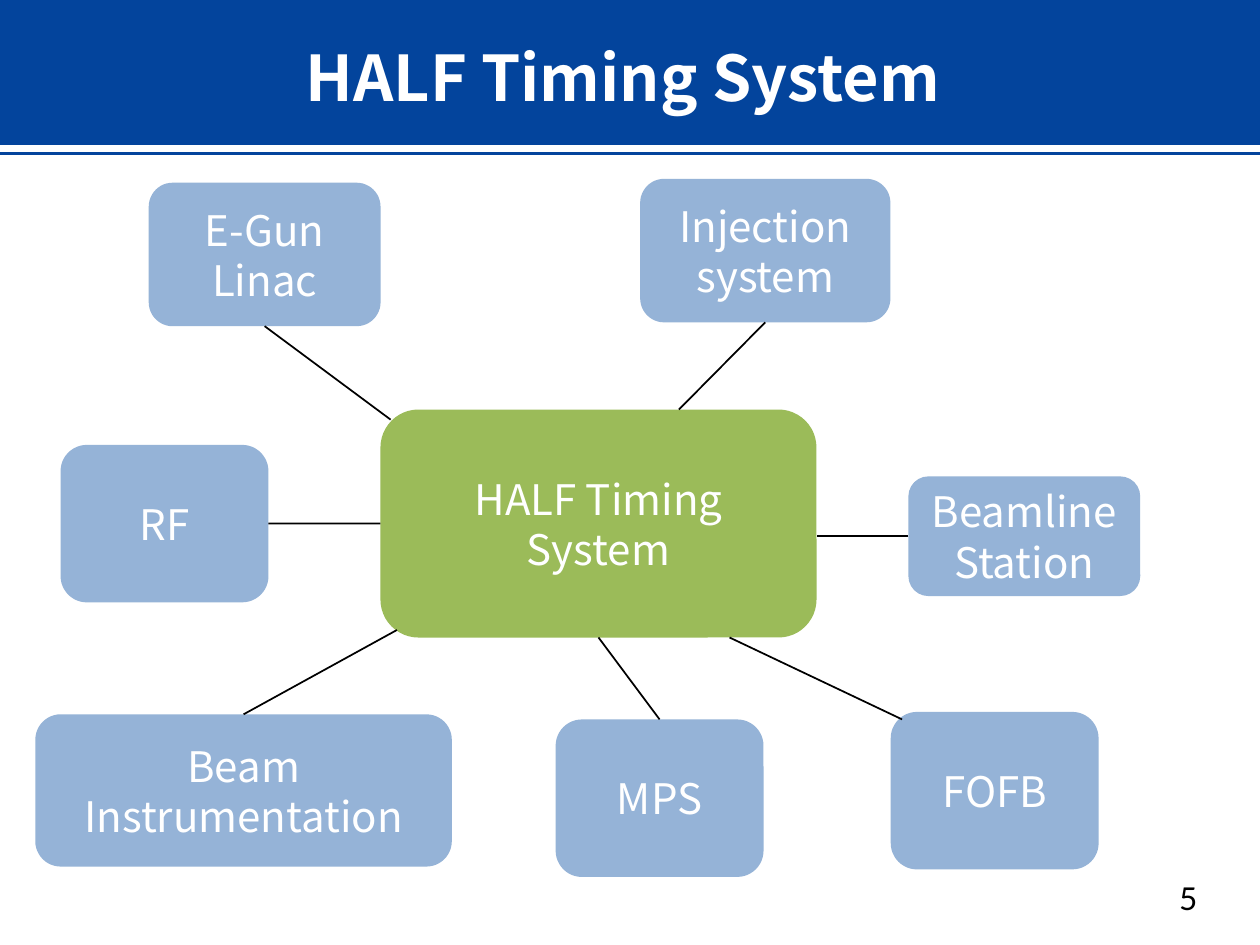
"""Build the HALF timing system slide: a hub and its linked subsystems."""
from lxml import etree
from pptx import Presentation
from pptx import util as u
from pptx.dml.color import RGBColor
from pptx.enum import shapes, text
from pptx.oxml import ns

HUES = {"navy": "03449C", "green": "9BBB59", "blue": "95B3D7",
        "white": "FFFFFF", "black": "000000"}
SANS = "Noto Sans CJK SC"
TOP, LEFT, BASE, RIGHT = range(4)

NODES = {
    "gun": (["E-Gun", "Linac"], (85, 104.4, 132.5, 82)),
    "inject": (["Injection system"], (365.8, 102.2, 143, 82)),
    "beam": (["Beam Instrumentation"], (20.2, 408.2, 238, 87)),
    "rf": (["RF"], (34.6, 254.2, 118.8, 90)),
    "fofb": (["FOFB"], (509, 406.8, 118.8, 90)),
    "mps": (["MPS"], (317.5, 411.1, 118.8, 90)),
    "station": (["Beamline Station"], (519.1, 272.2, 132.5, 68.4)),
}
LINKS = [
    (("gun", BASE), (223.2, 239.8)),
    (("rf", RIGHT), ("hub", LEFT)),
    (("beam", TOP), (226.8, 360)),
    (("inject", BASE), (388, 234)),
    ((416.9, 364.3), (515.5, 411.1)),
    (("hub", BASE), ("mps", TOP)),
    (("station", LEFT), (466.6, 306.4)),
]


def tint(name):
    """Return a colour by its name."""
    return RGBColor.from_string(HUES[name])


def write(frame, lines, size, hue, font=SANS, bold=False, align=text.PP_ALIGN.CENTER):
    """Fill a text frame with one paragraph per line."""
    frame.word_wrap = True
    frame.vertical_anchor = text.MSO_ANCHOR.MIDDLE
    for i, line in enumerate(lines):
        para = frame.add_paragraph() if i else frame.paragraphs[0]
        para.alignment = align
        run = para.add_run()
        run.text = line
        run.font.name, run.font.size, run.font.bold = font, u.Pt(size), bold
        run.font.color.rgb = tint(hue)


def block(slide, kind, area, hue):
    """Add a plain filled shape."""
    shape = slide.shapes.add_shape(kind, *map(u.Pt, area))
    shape.shadow.inherit = False
    shape.fill.solid()
    shape.fill.fore_color.rgb = tint(hue)
    shape.line.fill.background()
    return shape


def node(slide, lines, area, hue):
    """Add a rounded box with its label."""
    shape = block(slide, shapes.MSO_SHAPE.ROUNDED_RECTANGLE, area, hue)
    write(shape.text_frame, lines, 24, "white")
    return shape


def label(slide, area, line, size, hue, **style):
    """Add a text box of one line."""
    box = slide.shapes.add_textbox(*map(u.Pt, area))
    write(box.text_frame, [line], size, hue, **style)


def link(slide, boxes, start, end):
    """Add a line between two ends, each a box side or a free point."""
    line = slide.shapes.add_connector(shapes.MSO_CONNECTOR.STRAIGHT, 0, 0, 0, 0)
    if start[0] in boxes:
        line.begin_connect(boxes[start[0]], start[1])
    else:
        line.begin_x, line.begin_y = map(u.Pt, start)
    if end[0] in boxes:
        line.end_connect(boxes[end[0]], end[1])
    else:
        line.end_x, line.end_y = map(u.Pt, end)
    line.line.color.rgb = tint("black")
    line.line.width = u.Pt(1)
    etree.SubElement(line._element.spPr, ns.qn("a:effectLst"))


def main():
    """Build and save the slide."""
    deck = Presentation()
    deck.slide_width, deck.slide_height = u.Pt(720), u.Pt(540)
    slide = deck.slides.add_slide(deck.slide_layouts[6])
    for top, height in ((0, 82.8), (87, 1.5)):
        block(slide, shapes.MSO_SHAPE.RECTANGLE, (0, top, 720, height), "navy")
    label(slide, (36, -1.4, 648, 90), "HALF Timing System ", 36, "white", bold=True)
    label(slide, (666.7, 496.8, 34.6, 32.4), "5", 18, "black",
          font="Lato", align=text.PP_ALIGN.LEFT)
    boxes = {"hub": node(slide, ["HALF Timing System"], (217.4, 234, 249.2, 130.3), "green")}
    for name, (lines, area) in NODES.items():
        boxes[name] = node(slide, lines, area, "blue")
    for start, end in LINKS:
        link(slide, boxes, start, end)
    deck.save("out.pptx")


if __name__ == "__main__":
    main()
